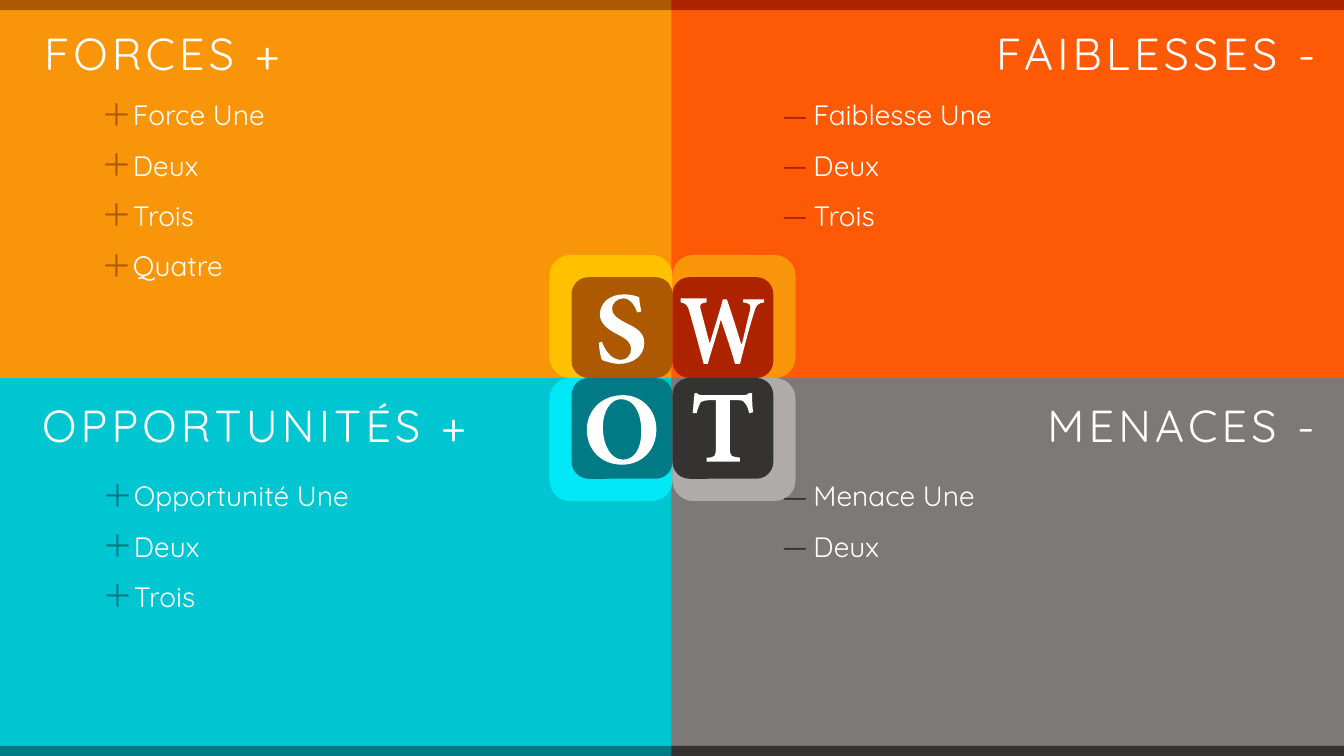
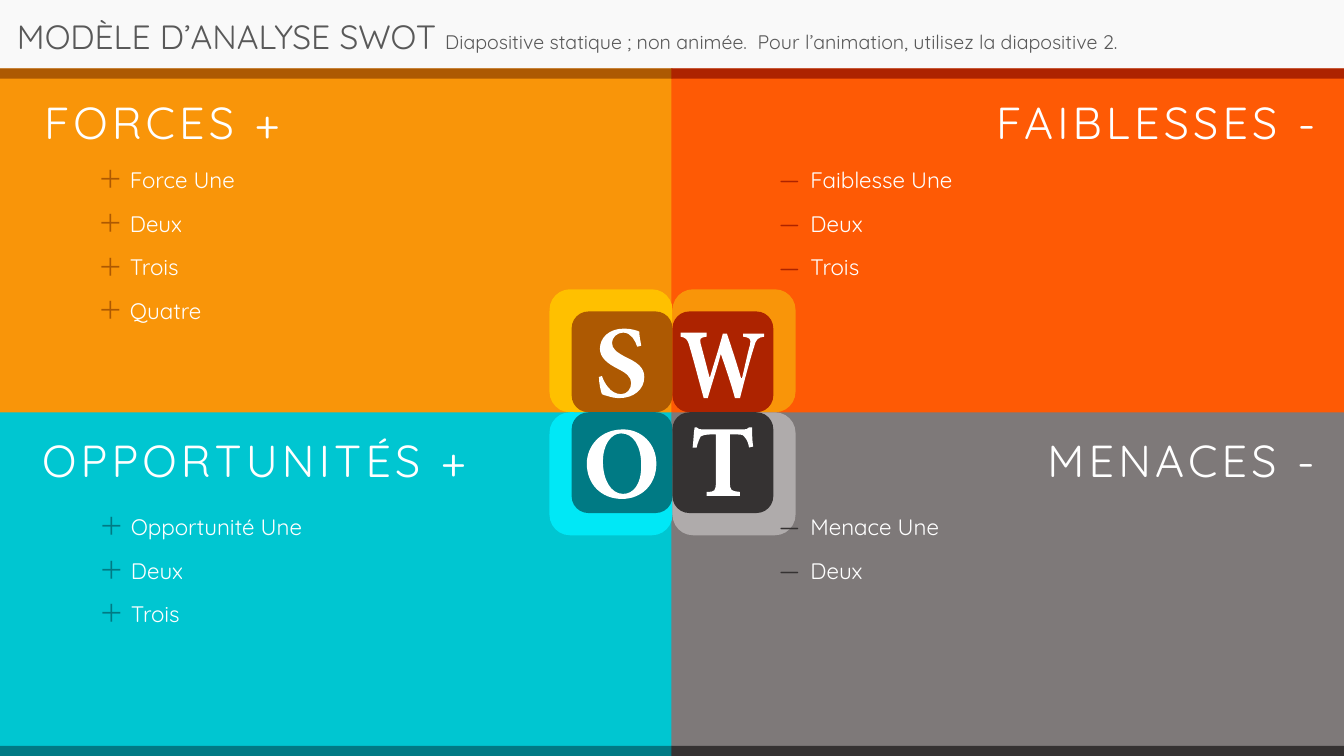
from dataclasses import dataclass

from lxml import etree
from pptx import Presentation
from pptx import util as u
from pptx.dml.color import RGBColor
from pptx.enum import shapes, text
from pptx.oxml import ns

# Lengths are in px of 1/100 inch
PX = 9144
WIDTH, HEIGHT = 1333, 750
MIDDLE = 667
BAND, TILE, HALO = 10, 100, 122
FONT = "Quicksand"

WHITE = RGBColor(0xFF, 0xFF, 0xFF)
PAPER = RGBColor(0xF9, 0xF9, 0xF9)
TEXT_GREY = RGBColor(0x59, 0x59, 0x59)
AMBER = RGBColor(0xF9, 0x95, 0x09)
BROWN = RGBColor(0xAD, 0x59, 0x02)
YELLOW = RGBColor(0xFF, 0xC0, 0x00)
ORANGE = RGBColor(0xFE, 0x5A, 0x05)
RED = RGBColor(0xAD, 0x23, 0x00)
TURQUOISE = RGBColor(0x00, 0xC6, 0xD1)
TEAL = RGBColor(0x00, 0x7A, 0x84)
CYAN = RGBColor(0x00, 0xE8, 0xF6)
GREY = RGBColor(0x7E, 0x79, 0x79)
CHARCOAL = RGBColor(0x35, 0x32, 0x32)
SILVER = RGBColor(0xAF, 0xAB, 0xAB)

# Letter outlines: M move, L line, C cubic curve, Z close
S_OUTLINE = """M 38 18 C 36 12 32 4 24 4 C 18 4 13 9 13 14 C 13 20 17 23 26 28
C 37 33 45 38 45 48 C 45 60 35 69 20 69 C 16 69 12 68 9 67 C 6 66 4 66 3 65
C 2 63 0 54 0 48 L 3 47 C 5 53 11 65 22 65 C 28 65 32 60 32 54
C 32 48 27 44 19 40 C 9 35 1 29 1 20 C 1 9 10 0 25 0 C 32 0 38 2 40 3
C 40 7 41 11 42 17 L 38 18 Z"""
W_OUTLINE = """M 83 4 C 77 5 75 6 73 14 C 71 20 66 37 59 65 L 54 65
C 50 50 45 36 40 21 L 40 21 C 36 36 31 51 27 65 L 23 65 C 18 47 14 31 9 14
C 7 6 5 5 0 4 L 0 0 L 26 0 L 26 4 C 19 5 19 6 20 11 C 23 22 26 34 29 45
L 29 45 C 33 31 38 16 42 1 L 46 1 C 51 16 56 31 60 45 L 61 45
C 64 33 67 18 69 12 C 70 6 69 5 62 4 L 62 1 L 83 1 L 83 4 Z"""
O_OUTLINE = """M 69 34 C 69 55 54 69 35 69 C 14 69 0 54 0 34 C 0 17 13 0 36 0
C 54 0 69 14 69 34 Z M 16 32 C 16 50 24 64 36 64 C 46 64 54 55 54 36
C 54 16 46 4 34 4 C 24 4 16 15 16 32 Z"""
T_OUTLINE = """M 56 20 C 55 14 53 11 51 9 C 50 7 47 7 41 7 L 37 7 L 37 54
C 37 63 38 63 47 64 L 47 68 L 14 68 L 14 64 C 22 64 23 63 23 54 L 23 7 L 20 7
C 11 7 10 8 8 9 C 7 11 5 15 4 20 L 0 20 C 1 12 1 5 2 0 L 4 0
C 6 2 7 2 10 2 L 50 2 C 53 2 54 2 56 0 L 59 0 C 59 4 59 13 60 19 L 56 20 Z"""


@dataclass
class Quadrant:
    right: bool
    lower: bool
    fill: RGBColor
    dark: RGBColor
    halo: RGBColor
    title: str
    title_left: int
    title_width: int
    items: list
    list_left: int
    list_width: int
    outline: str
    letter_offset: tuple  # from the point where the quadrants meet

    @property
    def left(self):
        return MIDDLE - 1 if self.right else 0

    @property
    def bullet(self):
        return "—" if self.right else "＋"


QUADRANTS = [
    Quadrant(False, False, AMBER, BROWN, YELLOW, "FORCES +", 34, 457,
             ["Force Une", "Deux", "Trois", "Quatre"], 91, 560,
             S_OUTLINE, (-73, -83)),
    Quadrant(True, False, ORANGE, RED, AMBER, "FAIBLESSES -", 920, 395,
             ["Faiblesse Une", "Deux", "Trois"], 766, 532,
             W_OUTLINE, (8, -79)),
    Quadrant(False, True, TURQUOISE, TEAL, CYAN, "OPPORTUNITÉS +", 32, 530,
             ["Opportunité Une", "Deux", "Trois"], 92, 560,
             O_OUTLINE, (-85, 17)),
    Quadrant(True, True, GREY, CHARCOAL, SILVER, "MENACES -", 964, 350,
             ["Menace Une", "Deux"], 766, 530,
             T_OUTLINE, (20, 15)),
]


def outline_segments(outline):
    """Split an outline into commands, each with its points."""
    tokens = iter(outline.split())
    counts = {"M": 1, "L": 1, "C": 3, "Z": 0}
    return [(command, [(int(next(tokens)), int(next(tokens)))
                       for _ in range(counts[command])])
            for command in tokens]


class Deck:
    def __init__(self):
        self.presentation = Presentation()
        self.presentation.slide_width = WIDTH * PX
        self.presentation.slide_height = HEIGHT * PX
        self.slide = None

    def new_slide(self):
        self.slide = self.presentation.slides.add_slide(
            self.presentation.slide_layouts[6])
        background = self.slide.background.fill
        background.solid()
        background.fore_color.rgb = PAPER

    def paint(self, shape, color):
        shape.shadow.inherit = False
        shape.fill.solid()
        shape.fill.fore_color.rgb = color
        shape.line.fill.background()

    def block(self, left, top, width, height, color,
              kind=shapes.MSO_SHAPE.RECTANGLE):
        shape = self.slide.shapes.add_shape(
            kind, left * PX, top * PX, width * PX, height * PX)
        self.paint(shape, color)

    def tile(self, quadrant, center, size, color):
        left = MIDDLE if quadrant.right else MIDDLE - size
        top = center if quadrant.lower else center - size
        self.block(left, top, size, size, color,
                   shapes.MSO_SHAPE.ROUNDED_RECTANGLE)

    def letter(self, outline, left, top):
        segments = outline_segments(outline)
        builder = self.slide.shapes.build_freeform(*segments[0][1][0], scale=PX)
        for command, points in segments[1:]:
            if command == "M":
                builder.move_to(*points[0])
            else:
                builder.add_line_segments(points, close=command == "Z")
        shape = builder.convert_to_shape(left * PX, top * PX)
        self.paint(shape, WHITE)
        # Join each three lines of a curve into one cubic segment
        elements = iter(list(next(shape._element.iter(ns.qn("a:path")))))
        for command, points in segments:
            parts = [next(elements) for _ in points or [None]]
            if command == "C":
                curve = etree.Element(ns.qn("a:cubicBezTo"))
                parts[0].addprevious(curve)
                for part in parts:
                    curve.append(part[0])
                    part.getparent().remove(part)

    def text_frame(self, left, top, width, height):
        box = self.slide.shapes.add_textbox(
            left * PX, top * PX, width * PX, height * PX)
        frame = box.text_frame
        frame.word_wrap = True
        frame.auto_size = text.MSO_AUTO_SIZE.SHAPE_TO_FIT_TEXT
        return frame

    def style(self, paragraph, size, color):
        paragraph.font.name = FONT
        paragraph.font.size = u.Pt(size)
        paragraph.font.color.rgb = color

    def heading(self, quadrant, top):
        frame = self.text_frame(quadrant.title_left, top, quadrant.title_width, 64)
        paragraph = frame.paragraphs[0]
        run = paragraph.add_run()
        run.text = quadrant.title
        run._r.get_or_add_rPr().set("spc", "300")
        self.style(paragraph, 32, WHITE)
        if quadrant.right:
            paragraph.alignment = text.PP_ALIGN.RIGHT

    def bullet(self, paragraph, mark, color):
        properties = paragraph._p.get_or_add_pPr()
        properties.set("marL", str(31 * PX))
        properties.set("indent", str(-31 * PX))
        bullet_color = etree.Element(ns.qn("a:buClr"))
        etree.SubElement(bullet_color, ns.qn("a:srgbClr"), val=str(color))
        bullet_size = etree.Element(ns.qn("a:buSzPct"), val="110000")
        bullet_font = etree.Element(ns.qn("a:buFont"), typeface=FONT)
        bullet_mark = etree.Element(ns.qn("a:buChar"), char=mark)
        # Bullet settings must stand before the default run properties
        default_run = properties.find(ns.qn("a:defRPr"))
        for element in (bullet_color, bullet_size, bullet_font, bullet_mark):
            default_run.addprevious(element)

    def bullet_list(self, quadrant, left, top, size, step):
        frame = self.text_frame(left, top, quadrant.list_width,
                                step * len(quadrant.items) - 6)
        for index, item in enumerate(quadrant.items):
            paragraph = frame.add_paragraph() if index else frame.paragraphs[0]
            paragraph.text = item
            paragraph.space_after = u.Pt(12)
            self.style(paragraph, size, WHITE)
            self.bullet(paragraph, quadrant.bullet, quadrant.dark)

    def caption(self, title, note):
        paragraph = self.text_frame(7, 11, 1264, 50).paragraphs[0]
        paragraph.add_run().text = title
        note_run = paragraph.add_run()
        note_run.text = note
        note_run.font.size = u.Pt(14)
        self.style(paragraph, 24, TEXT_GREY)

    def swot(self, top, list_size, list_step, list_shift=0):
        center = (top + HEIGHT) // 2
        # Coloured quadrants; the lower ones cover the ends of the upper ones
        for quadrant in QUADRANTS:
            start = center if quadrant.lower else top
            height = min(HEIGHT // 2, HEIGHT - start)
            self.block(quadrant.left, start, MIDDLE, height, quadrant.fill)
        # Halos around the letters
        for quadrant in QUADRANTS:
            self.tile(quadrant, center, HALO, quadrant.halo)
        # Headings, lists, letter tiles and edge bands
        for quadrant in QUADRANTS:
            lower = quadrant.lower
            self.heading(quadrant, center + 15 if lower else top + 21)
            self.bullet_list(quadrant, quadrant.list_left - list_shift,
                             center + 95 if lower else top + 92,
                             list_size, list_step)
            self.tile(quadrant, center, TILE, quadrant.dark)
            across, down = quadrant.letter_offset
            self.letter(quadrant.outline, MIDDLE + across, center + down)
            self.block(quadrant.left, HEIGHT - BAND if lower else top,
                       MIDDLE, BAND, quadrant.dark)


def main():
    deck = Deck()

    # Slide 1: full-height matrix
    deck.new_slide()
    deck.swot(top=0, list_size=20, list_step=50)

    # Slide 2: matrix under a caption
    deck.new_slide()
    deck.swot(top=68, list_size=16, list_step=44, list_shift=3)
    deck.caption("MODÈLE D’ANALYSE SWOT ",
                 "Diapositive statique ; non animée.  "
                 "Pour l’animation, utilisez la diapositive 2.")

    deck.presentation.save("out.pptx")


if __name__ == "__main__":
    main()
